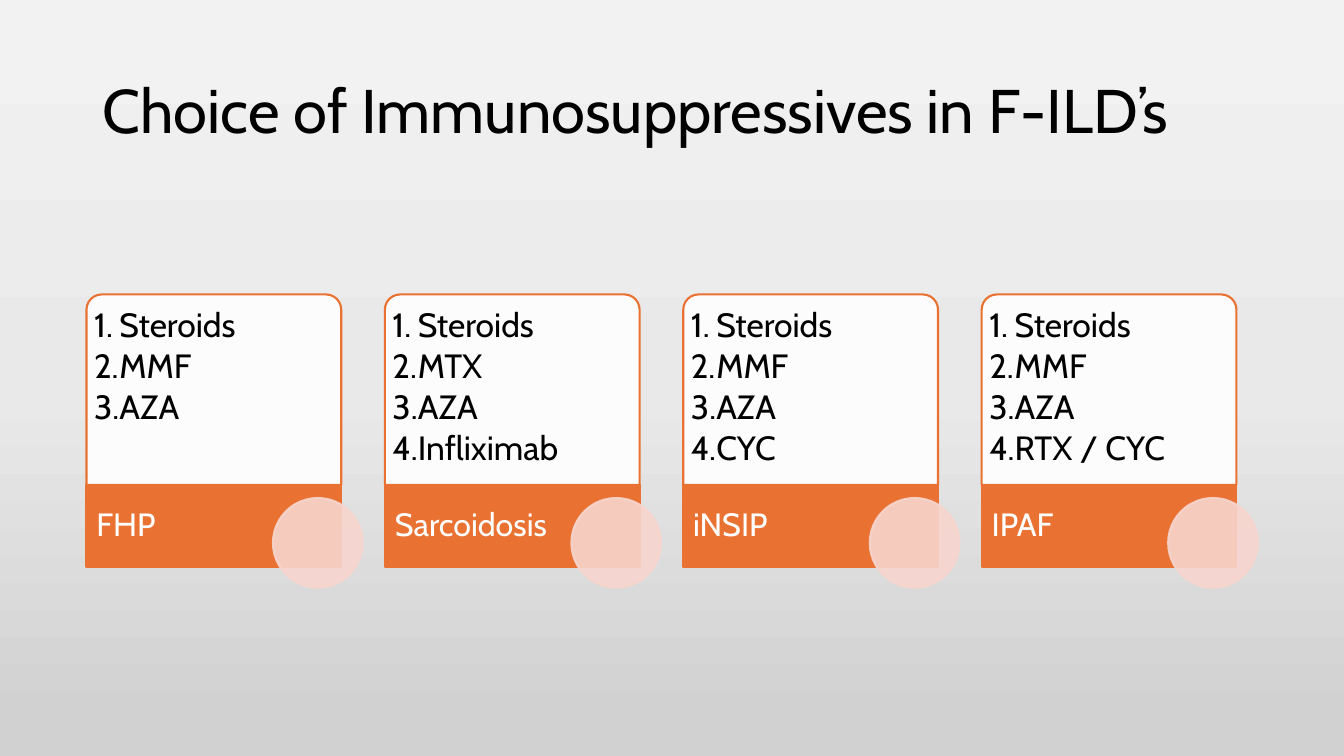
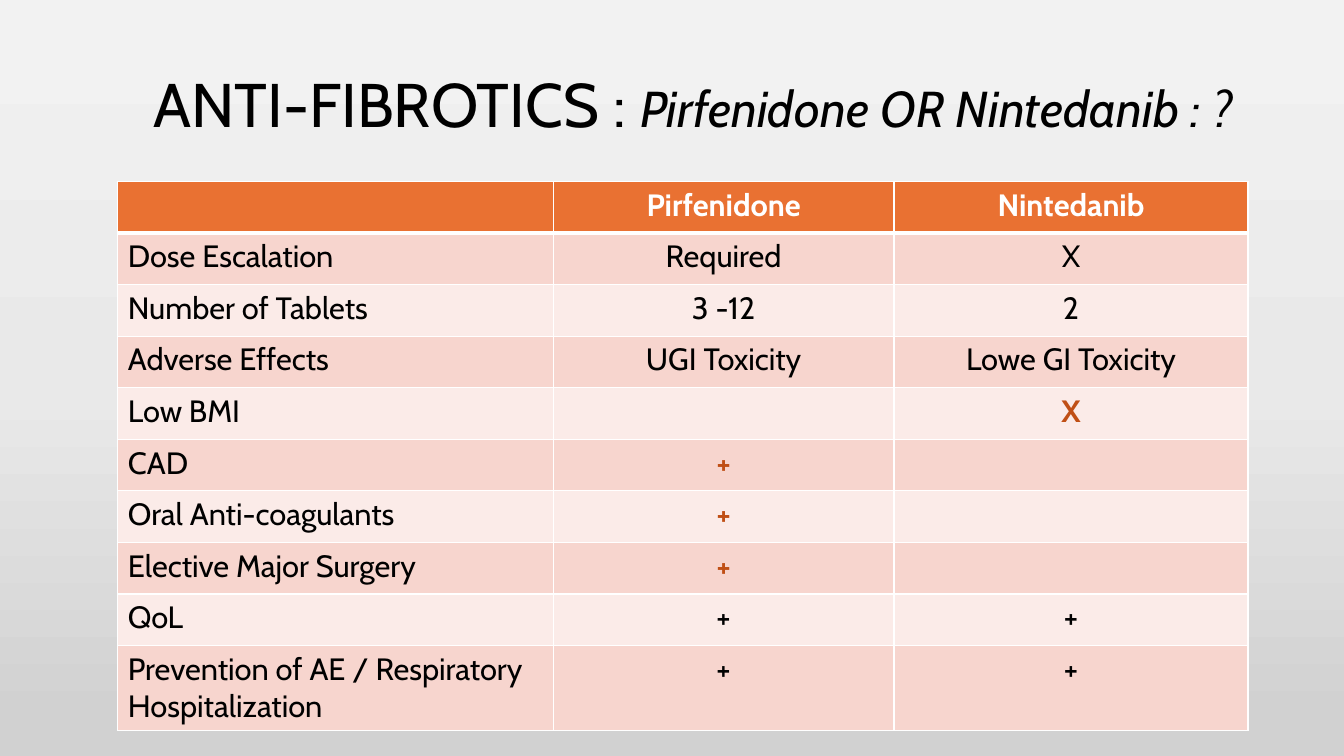
from dataclasses import dataclass

from lxml import etree
from pptx import Presentation
from pptx import util as u
from pptx.dml.color import RGBColor
from pptx.enum import shapes, text
from pptx.oxml.ns import qn


@dataclass(frozen=True)
class Theme:
    font: str = "Cabin"
    black: str = "000000"
    white: str = "FFFFFF"
    orange: str = "E97132"
    rust: str = "C04F15"
    blush: str = "F7D5CE"
    pale: str = "FBEBE8"
    backdrop: tuple = ((0, "F2F2F2"), (1, "F2F2F2"), (52, "E9E9E9"),
                       (95, "D1D1D1"), (100, "D1D1D1"))
    title: int = 44
    subtitle: int = 36
    item: int = 24
    label: int = 23
    cell: int = 22
    outline: float = 1.5
    border: int = 1
    heavy_border: int = 3


T = Theme()


def sub(parent, tag, **attrs):
    return etree.SubElement(parent, qn(tag), **{k: str(v) for k, v in attrs.items()})


def style_run(r, size, color=T.black, bold=False, italic=False):
    f = r.font
    f.name, f.size, f.bold, f.italic = T.font, u.Pt(size), bold, italic
    f.color.rgb = RGBColor.from_string(color)


def style_paragraph(p, size, color=T.black, bold=False, spacing=None,
                    align=text.PP_ALIGN.LEFT):
    p.alignment = align
    p.line_spacing = spacing
    for r in p.runs:
        style_run(r, size, color, bold)


def set_margins(tf, left, top, right, bottom):
    tf.margin_left, tf.margin_top = u.Cm(left), u.Cm(top)
    tf.margin_right, tf.margin_bottom = u.Cm(right), u.Cm(bottom)


def set_background(master):
    fill = master.background.fill
    fill.gradient()
    fill.gradient_angle = 270
    stops = next(master.element.iter(qn("a:gsLst")))
    for stop in list(stops):
        stops.remove(stop)
    for position, color in T.backdrop:
        sub(sub(stops, "a:gs", pos=position * 1000), "a:srgbClr", val=color)


def add_title(s, box, parts):
    sp = s.shapes.title
    sp.left, sp.top, sp.width, sp.height = map(u.Cm, box)
    tf = sp.text_frame
    tf.auto_size = text.MSO_AUTO_SIZE.NONE
    tf.word_wrap = True
    tf.vertical_anchor = text.MSO_ANCHOR.MIDDLE
    p = tf.paragraphs[0]
    p.alignment, p.line_spacing = text.PP_ALIGN.LEFT, 0.9
    for words, size, italic in parts:
        r = p.add_run()
        r.text = words
        style_run(r, size, italic=italic)


def add_panel(parent, kind, box, fill, line, opacity=100, line_opacity=100):
    sp = parent.shapes.add_shape(kind, *map(u.Cm, box))
    sp.shadow.inherit = False
    sp.fill.solid()
    sp.fill.fore_color.rgb = RGBColor.from_string(fill)
    sp.line.color.rgb = RGBColor.from_string(line)
    sp.line.width = u.Pt(T.outline)
    spPr = sp.fill._xPr
    for holder, alpha in ((spPr, opacity), (spPr.find(qn("a:ln")), line_opacity)):
        if alpha < 100:
            sub(holder.find(f"{qn('a:solidFill')}/{qn('a:srgbClr')}"),
                "a:alpha", val=alpha * 1000)
    return sp


def add_numbered_items(tf, items):
    tf.text = "\n".join(items)
    for p in tf.paragraphs:
        pPr = p._p.get_or_add_pPr()
        pPr.set("marL", str(u.Cm(0.64)))
        pPr.set("indent", str(-u.Cm(0.64)))
        sub(pPr, "a:buFont", typeface=T.font)
        sub(pPr, "a:buAutoNum", type="arabicPeriod")
        p.space_after = u.Pt(3.2)
        style_paragraph(p, T.item, spacing=0.9)


def add_card(s, left, top, width, height, disease, drugs):
    band_height, dot = 2.06, 2.26
    list_height = height - band_height
    band_top = top + list_height
    group = s.shapes.add_group_shape()

    panel = add_panel(group, shapes.MSO_SHAPE.ROUND_2_SAME_RECTANGLE,
                      (left, top, width, list_height), T.white, T.orange, 90)
    panel.adjustments[0] = 0.08
    tf = panel.text_frame
    tf.word_wrap = True
    tf.vertical_anchor = text.MSO_ANCHOR.TOP
    set_margins(tf, 0.08, 0.25, 0.08, 0.08)
    add_numbered_items(tf, drugs)

    band = add_panel(group, shapes.MSO_SHAPE.RECTANGLE,
                     (left, band_top, width, band_height), T.orange, T.orange)
    tf = band.text_frame
    tf.word_wrap = True
    tf.vertical_anchor = text.MSO_ANCHOR.MIDDLE
    set_margins(tf, 0.25, 0, 1.98, 0)
    tf.text = disease
    style_paragraph(tf.paragraphs[0], T.label, T.white, spacing=0.9)

    add_panel(group, shapes.MSO_SHAPE.OVAL,
              (left + width - 1.72, band_top + 0.33, dot, dot),
              T.blush, T.blush, 90, 90)


def add_card_row(s, box, cards, gap=1.1):
    left, top, width, height = box
    card_width = (width - gap * (len(cards) - 1)) / len(cards)
    for i, (disease, drugs) in enumerate(cards):
        add_card(s, left + i * (card_width + gap), top, card_width, height,
                 disease, drugs)


def set_borders(cell, top, bottom):
    tcPr = cell._tc.get_or_add_tcPr()
    for side, width in (("L", T.border), ("R", T.border), ("T", top), ("B", bottom)):
        ln = sub(tcPr, f"a:ln{side}", w=u.Pt(width))
        sub(sub(ln, "a:solidFill"), "a:srgbClr", val=T.white)


def add_comparison_table(s, box, rows, widths, row_height, highlights):
    left, top, width, height = box
    table = s.shapes.add_table(len(rows), len(widths), *map(u.Cm, box)).table
    table.first_row = table.horz_banding = False
    for column, w in zip(table.columns, widths):
        column.width = u.Cm(w)
    for row in table.rows:
        row.height = u.Cm(row_height)
    table.rows[len(rows) - 1].height = u.Cm(height - row_height * (len(rows) - 1))

    for i, row in enumerate(rows):
        header = i == 0
        fill = T.orange if header else (T.pale, T.blush)[i % 2]
        for j, words in enumerate(row):
            cell = table.cell(i, j)
            set_borders(cell, T.heavy_border if i == 1 else T.border,
                        T.heavy_border if header else T.border)
            cell.fill.solid()
            cell.fill.fore_color.rgb = RGBColor.from_string(fill)
            cell.text = words
            marked = (i, j) in highlights
            color = T.white if header else T.rust if marked else T.black
            style_paragraph(cell.text_frame.paragraphs[0], T.cell, color,
                            header or marked,
                            align=text.PP_ALIGN.CENTER if j else text.PP_ALIGN.LEFT)


def immunosuppressives_slide(prs):
    s = prs.slides.add_slide(prs.slide_layouts[5])
    add_title(s, (2.33, 1.01, 29.21, 3.68),
              [("Choice of Immunosuppressives in F-ILD’s", T.title, False)])
    add_card_row(s, (2.18, 7.42, 28.98, 6.86), [
        ("FHP", ["Steroids", "MMF", "AZA"]),
        ("Sarcoidosis", ["Steroids", "MTX", "AZA", "Infliximab"]),
        ("iNSIP", ["Steroids", "MMF", "AZA", "CYC"]),
        ("IPAF", ["Steroids", "MMF", "AZA", "RTX / CYC"]),
    ])


def antifibrotics_slide(prs):
    s = prs.slides.add_slide(prs.slide_layouts[5])
    add_title(s, (3.61, 0.89, 27.86, 3.63),
              [("ANTI-FIBROTICS : ", T.title, False),
               ("Pirfenidone OR Nintedanib : ?", T.subtitle, True)])
    rows = [
        ("", "Pirfenidone", "Nintedanib"),
        ("Dose Escalation", "Required", "X"),
        ("Number of Tablets", "3 -12", "2"),
        ("Adverse Effects", "UGI Toxicity", "Lowe GI Toxicity"),
        ("Low BMI", "", "X"),
        ("CAD", "+", ""),
        ("Oral Anti-coagulants", "+", ""),
        ("Elective Major Surgery", "+", ""),
        ("QoL", "+", "+"),
        ("Prevention of AE / Respiratory Hospitalization", "+", "+"),
    ]
    add_comparison_table(s, (2.97, 4.57, 28.48, 13.8), rows, (10.97, 8.59, 8.92),
                         1.3, {(4, 2), (5, 1), (6, 1), (7, 1)})


def main():
    prs = Presentation()
    prs.slide_width, prs.slide_height = u.Cm(33.87), u.Cm(19.05)
    set_background(prs.slide_master)
    immunosuppressives_slide(prs)
    antifibrotics_slide(prs)
    prs.save("out.pptx")


if __name__ == "__main__":
    main()
